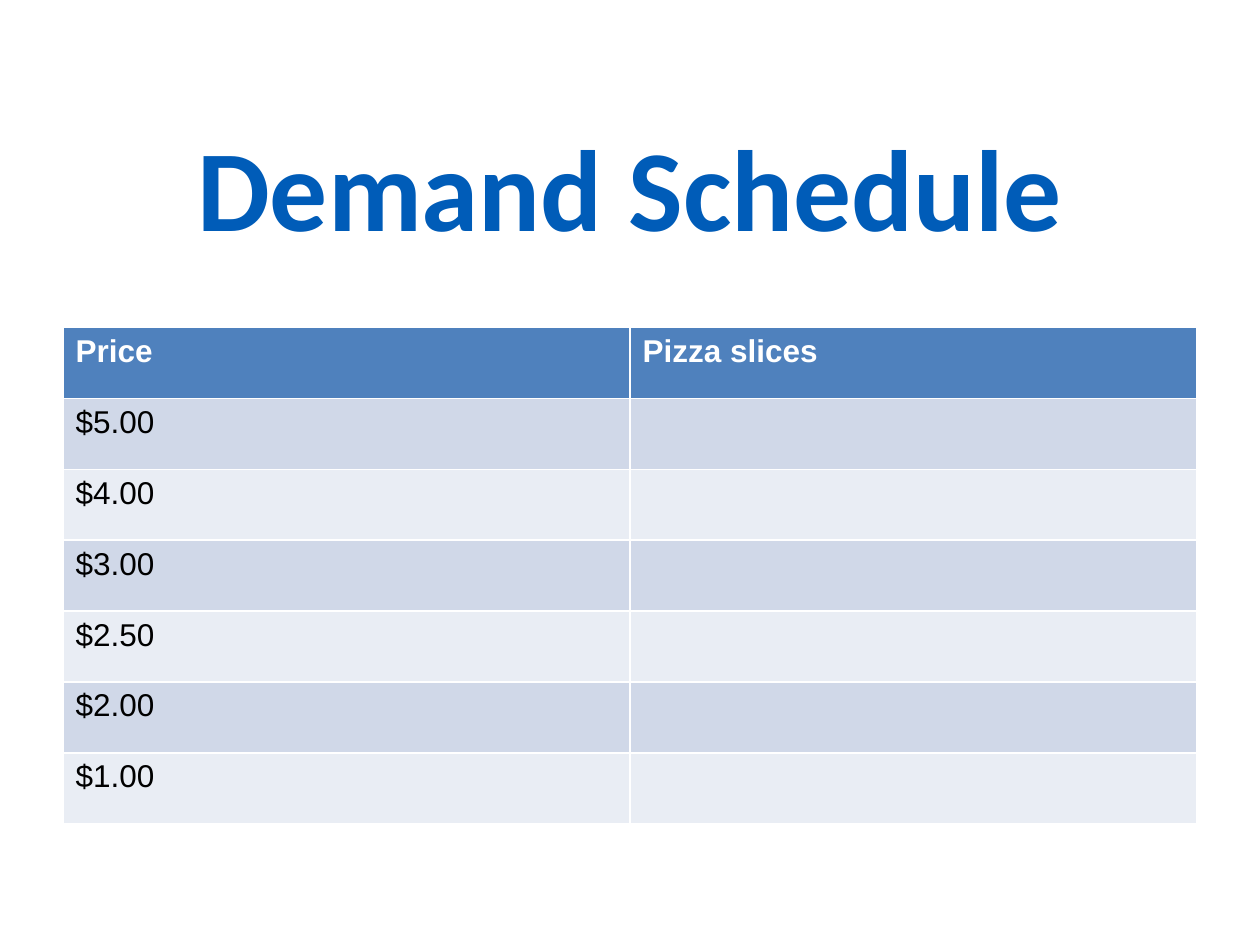
import pptx
import pptx.dml.color
import pptx.enum.text
import pptx.util

Cm, Pt = pptx.util.Cm, pptx.util.Pt
RGBColor = pptx.dml.color.RGBColor

TITLE_BLUE = RGBColor(0x00, 0x5C, 0xB8)
HEADER_BLUE = RGBColor(0x4F, 0x81, 0xBD)
BAND_DARK = RGBColor(0xD0, 0xD8, 0xE8)
BAND_LIGHT = RGBColor(0xE9, 0xED, 0xF4)
WHITE = RGBColor(0xFF, 0xFF, 0xFF)
BLACK = RGBColor(0x00, 0x00, 0x00)

HEADERS = ["Price", "Pizza slices"]
PRICES = ["$5.00", "$4.00", "$3.00", "$2.50", "$2.00", "$1.00"]


def style_font(font, name, size, color, bold):
    """Apply typeface, size, colour and weight to a font."""
    font.name = name
    font.size = Pt(size)
    font.color.rgb = color
    font.bold = bold


def set_title(s, text):
    """Place and format the slide title."""
    sp = s.shapes.title
    sp.left, sp.top, sp.width, sp.height = Cm(1.27), Cm(2.54), Cm(22.86), Cm(3.18)
    tf = sp.text_frame
    tf.text = text
    tf.vertical_anchor = pptx.enum.text.MSO_ANCHOR.MIDDLE
    p = tf.paragraphs[0]
    p.alignment = pptx.enum.text.PP_ALIGN.CENTER
    p.line_spacing = Pt(57)
    style_font(p.runs[0].font, "Calibri", 66, TITLE_BLUE, True)


def fill_cell(cell, text, fill, color, bold):
    """Write one table cell with its fill and font."""
    cell.fill.solid()
    cell.fill.fore_color.rgb = fill
    cell.text_frame.text = text
    style_font(cell.text_frame.paragraphs[0].font, "Arial", 18, color, bold)


def add_schedule(s, headers, rows):
    """Add the demand table with a header row and banded body rows."""
    frame = s.shapes.add_table(len(rows) + 1, len(headers),
                               Cm(1.27), Cm(6.6), Cm(22.86), Cm(10.01))
    table = frame.table
    for c, text in enumerate(headers):
        fill_cell(table.cell(0, c), text, HEADER_BLUE, WHITE, True)
    for r, row in enumerate(rows, start=1):
        band = BAND_DARK if r % 2 else BAND_LIGHT
        for c, text in enumerate(row):
            fill_cell(table.cell(r, c), text, band, BLACK, False)


def main():
    """Build the slide and save it."""
    prs = pptx.Presentation()
    prs.slide_width, prs.slide_height = Cm(25.4), Cm(19.05)
    s = prs.slides.add_slide(prs.slide_layouts[5])
    set_title(s, "Demand Schedule")
    add_schedule(s, HEADERS, [(price, "") for price in PRICES])
    prs.save("out.pptx")


if __name__ == "__main__":
    main()
